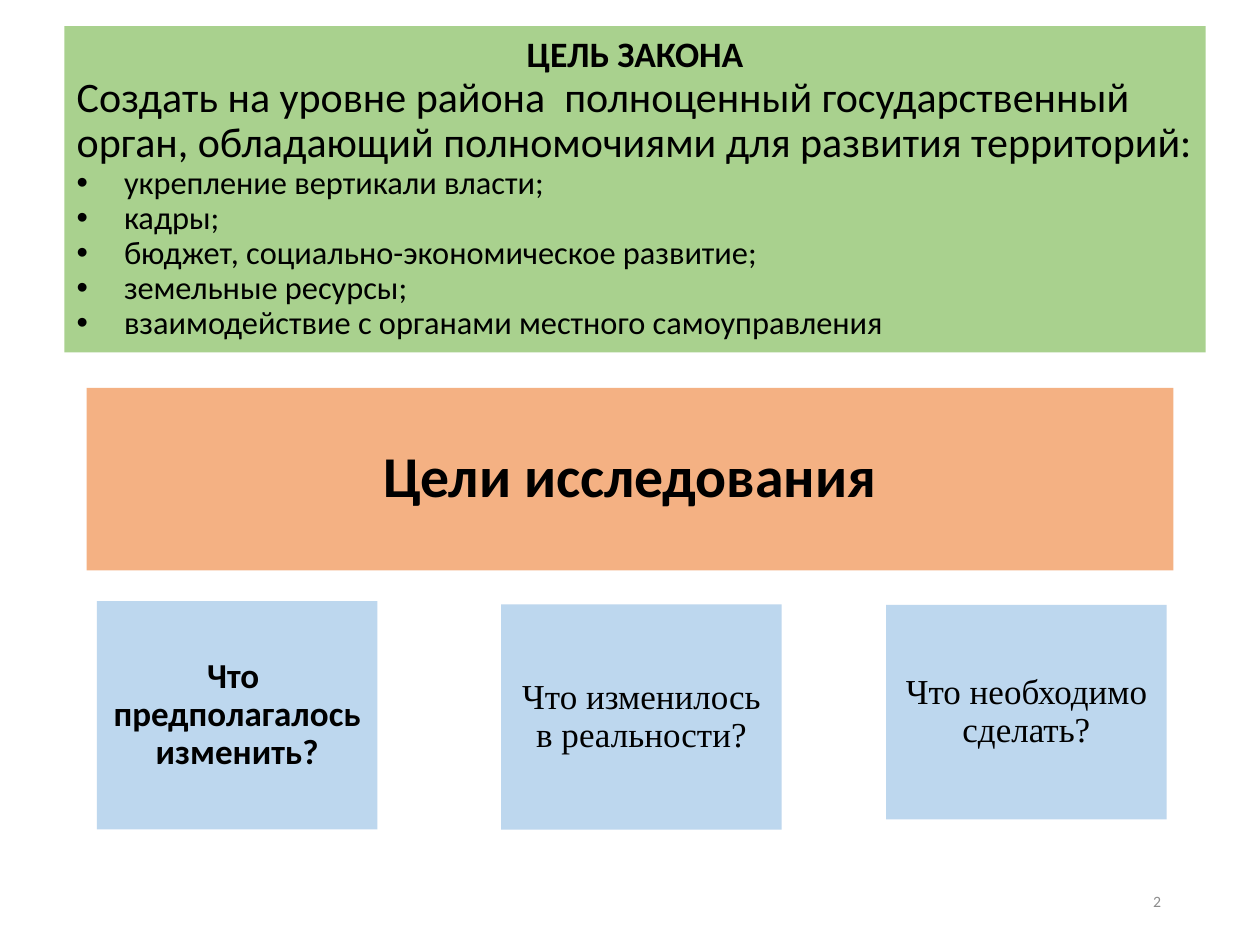
from dataclasses import dataclass

from lxml import etree
from pptx import Presentation
from pptx import util as u
from pptx.dml.color import RGBColor
from pptx.enum import shapes, text
from pptx.oxml import ns


@dataclass(frozen=True)
class Theme:
    sans: str = "Calibri"
    serif: str = "Times New Roman"
    ink: str = "000000"
    gray: str = "8C8C8C"
    green: str = "A9D18E"
    peach: str = "F4B183"
    blue: str = "BDD7EE"
    title: float = 33
    head: float = 20.4
    lead: float = 24
    item: float = 18.5
    card: float = 20
    small: float = 9


class Deck:
    """Draws styled elements on the current slide."""

    def __init__(self, theme, width, height):
        self.theme = theme
        self.prs = Presentation()
        self.prs.slide_width, self.prs.slide_height = u.Pt(width), u.Pt(height)
        self.slide = self.prs.slides.add_slide(self.prs.slide_layouts[6])

    def format(self, para, size, bold=False, font=None, color=None, align="CENTER", space=0.9):
        para.alignment = getattr(text.PP_ALIGN, align)
        para.line_spacing = space
        for run in para.runs:
            run.font.size = u.Pt(size)
            run.font.bold = bold
            run.font.name = font or self.theme.sans
            run.font.color.rgb = RGBColor.from_string(color or self.theme.ink)

    def bullet(self, para, indent):
        props = para._p.get_or_add_pPr()
        props.set("marL", str(u.Pt(indent)))
        props.set("indent", str(-u.Pt(indent)))
        etree.SubElement(props, ns.qn("a:buFont")).set("typeface", "Arial")
        etree.SubElement(props, ns.qn("a:buChar")).set("char", "•")

    def box(self, area, fill, words):
        shape = self.slide.shapes.add_shape(shapes.MSO_SHAPE.RECTANGLE, *map(u.Pt, area))
        shape.shadow.inherit = False
        shape.fill.solid()
        shape.fill.fore_color.rgb = RGBColor.from_string(fill)
        shape.line.fill.background()
        frame = shape.text_frame
        frame.word_wrap = True
        frame.vertical_anchor = text.MSO_ANCHOR.MIDDLE
        frame.text = words
        return frame.paragraphs

    def card(self, area, fill, words, size, bold=False, font=None):
        self.format(self.box(area, fill, words)[0], size, bold, font)

    def panel(self, area, head, lead, items):
        look = self.theme
        top, intro, *rest = self.box(area, look.green, "\n".join([head, lead, *items]))
        self.format(top, look.head, bold=True)
        self.format(intro, look.lead, align="LEFT")
        for para in rest:
            self.format(para, look.item, align="LEFT")
            self.bullet(para, 27)

    def number(self, area, words):
        frame = self.slide.shapes.add_textbox(*map(u.Pt, area)).text_frame
        frame.word_wrap = True
        frame.vertical_anchor = text.MSO_ANCHOR.MIDDLE
        frame.text = words
        self.format(frame.paragraphs[0], self.theme.small, color=self.theme.gray,
                    align="RIGHT", space=1)


def main():
    look = Theme()
    deck = Deck(look, 720, 540)
    deck.card((49.5, 221.6, 621, 104.4), look.peach, "Цели исследования", look.title, True)
    deck.number((508.5, 500.5, 162, 28.75), "2")
    cards = [
        (55.4, 343.5, 130.5, "Что  предполагалось изменить?", True, look.sans),
        (286.4, 345.4, 128.7, "Что изменилось в реальности?", False, look.serif),
        (506.4, 345.6, 122.6, "Что необходимо сделать?", False, look.serif),
    ]
    for left, top, height, words, bold, font in cards:
        deck.card((left, top, 160.3, height), look.blue, words, look.card, bold, font)
    deck.panel(
        (36.8, 14.9, 652.2, 186.5),
        "ЦЕЛЬ ЗАКОНА",
        "Создать на уровне района  полноценный государственный орган, "
        "обладающий полномочиями для развития территорий:",
        [
            "укрепление вертикали власти;",
            "кадры;",
            "бюджет, социально-экономическое развитие;",
            "земельные ресурсы;",
            "взаимодействие с органами местного самоуправления",
        ],
    )
    deck.prs.save("out.pptx")


if __name__ == "__main__":
    main()
